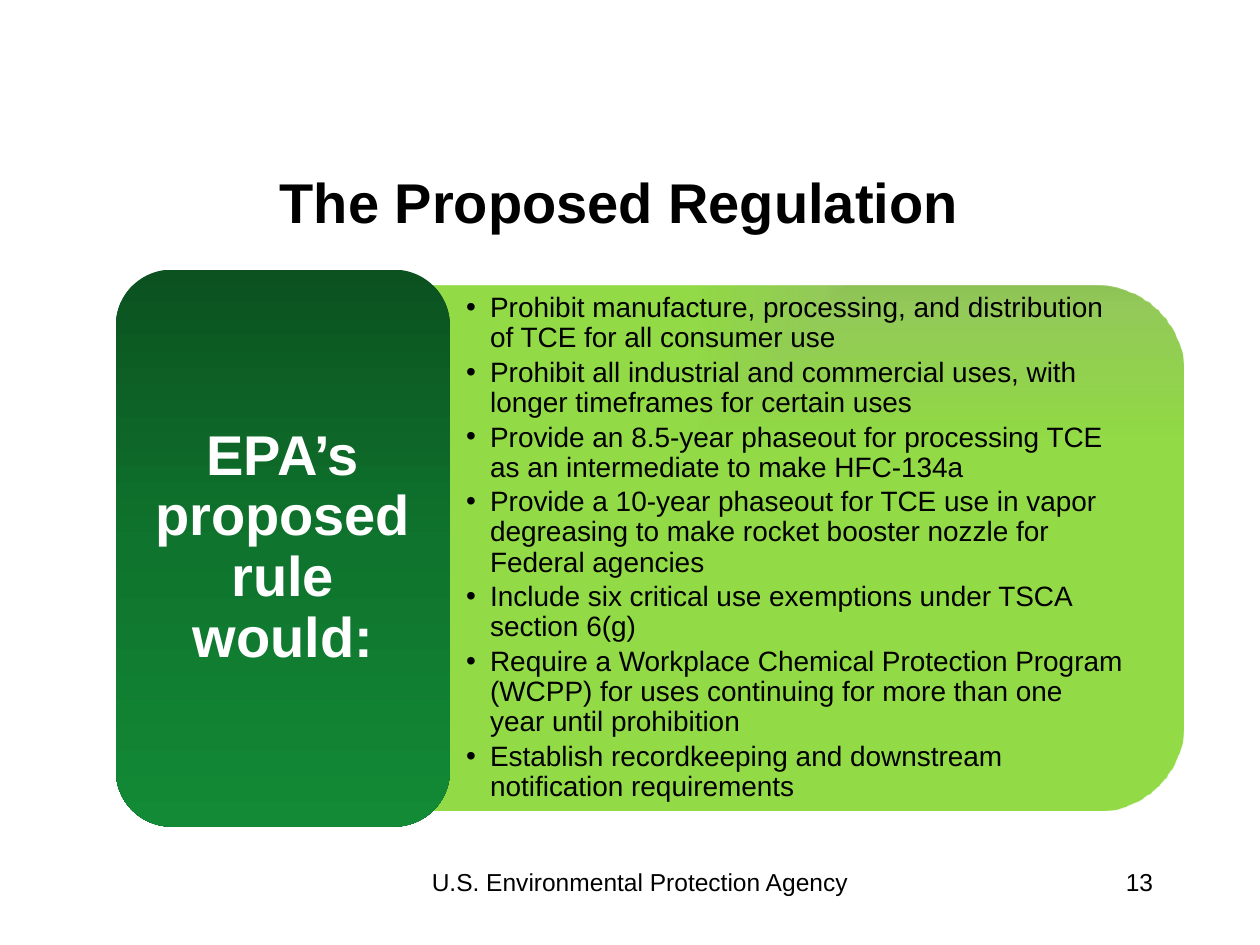
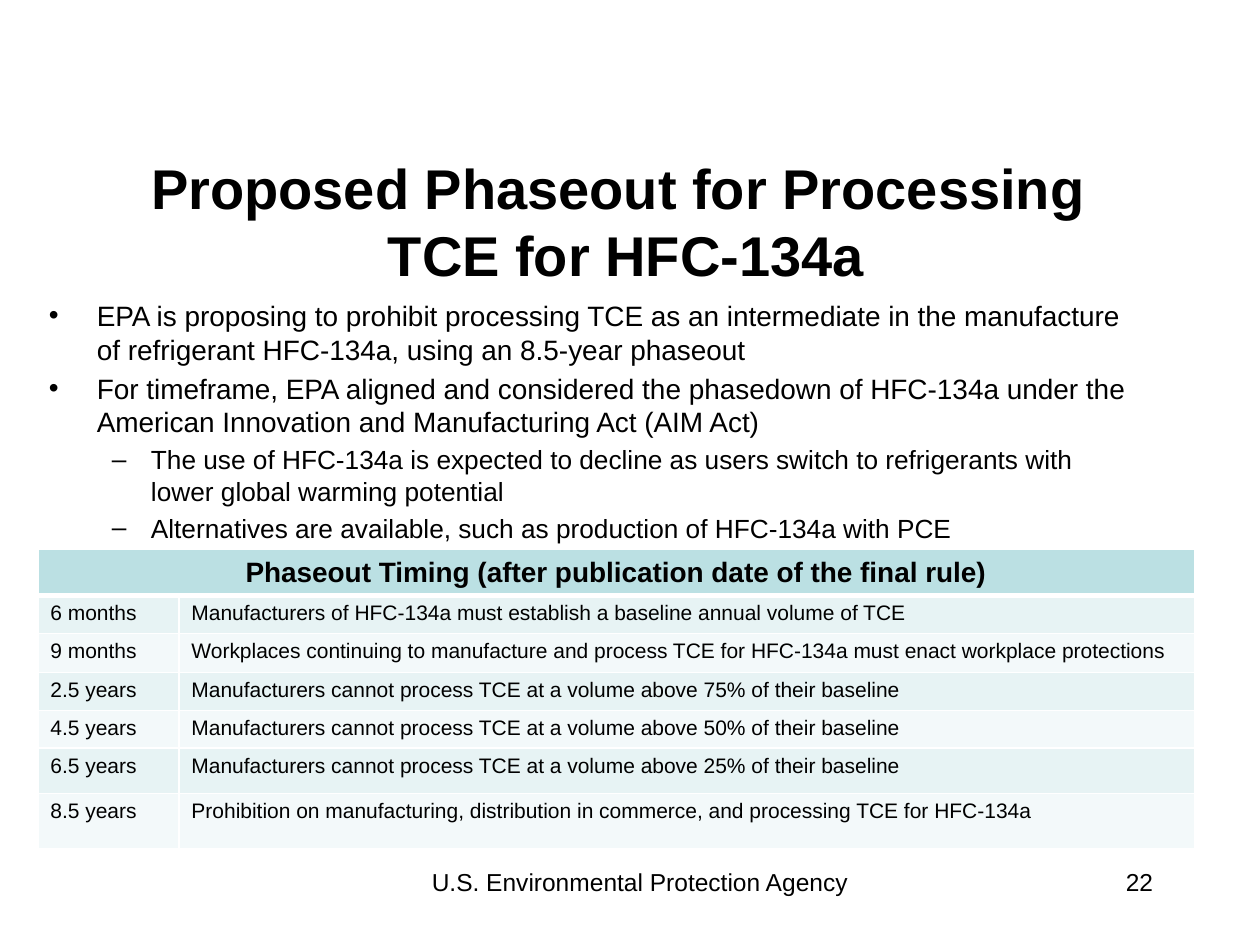
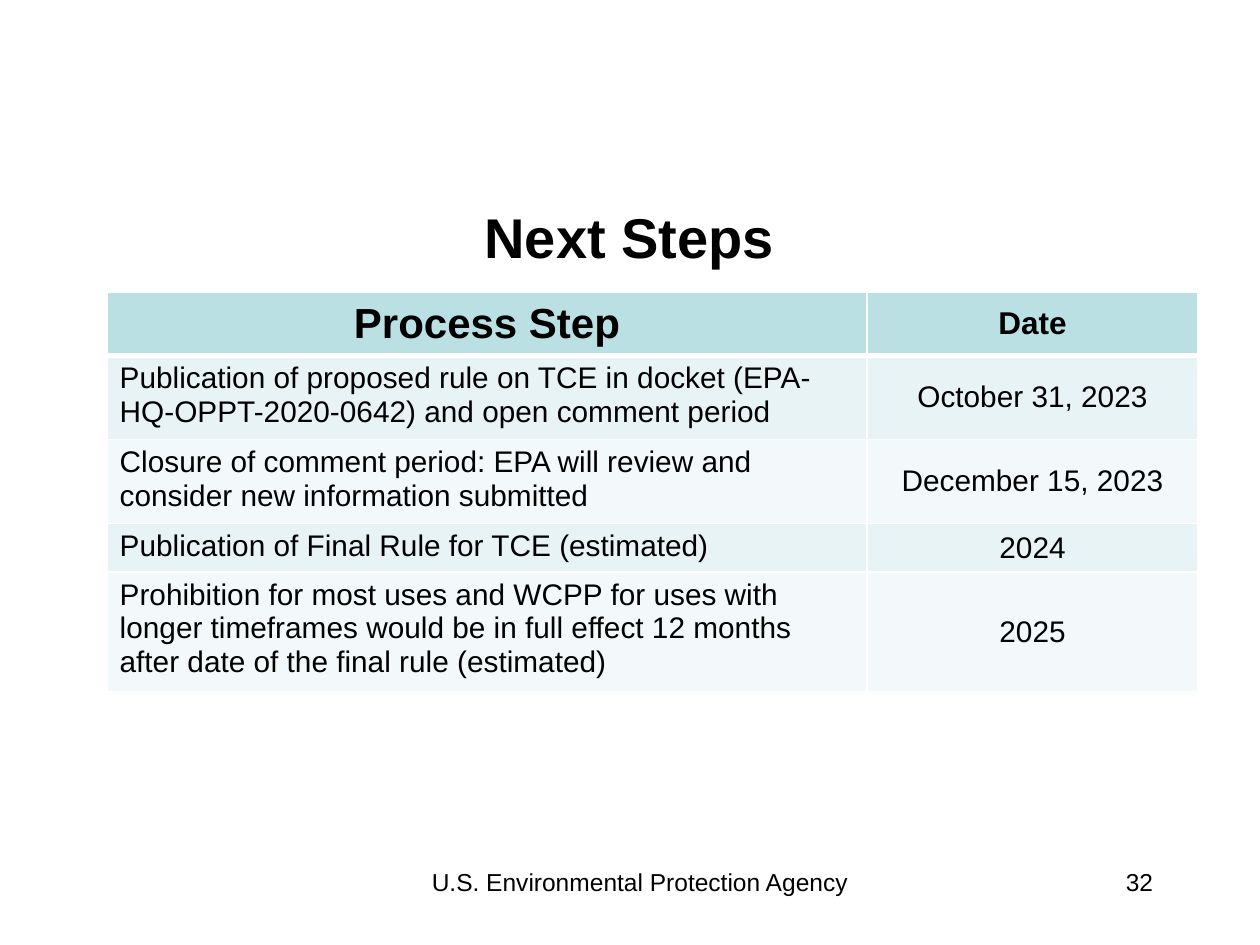
"""Build three slides on the proposed TCE regulation."""
from lxml.etree import SubElement
from pptx import Presentation
from pptx.dml.color import RGBColor
from pptx.enum.shapes import MSO_SHAPE
from pptx.enum.text import MSO_ANCHOR, MSO_AUTO_SIZE, PP_ALIGN
from pptx.oxml.ns import qn
from pptx.util import Inches, Pt

FONT = "Arial"
BLACK, WHITE = "000000", "FFFFFF"
HEADER_FILL = "BBE0E3"
BAND_FILLS = ("E7F3F4", "F3F9FA")
AGENCY = "U.S. Environmental Protection Agency"
LEFT, CENTER, RIGHT = PP_ALIGN.LEFT, PP_ALIGN.CENTER, PP_ALIGN.RIGHT

RULE_POINTS = (
    "Prohibit manufacture, processing, and distribution of TCE for all consumer use",
    "Prohibit all industrial and commercial uses, with longer timeframes for certain uses",
    "Provide an 8.5-year phaseout for processing TCE as an intermediate to make HFC-134a",
    "Provide a 10-year phaseout for TCE use in vapor degreasing to make rocket booster "
    "nozzle for Federal agencies",
    "Include six critical use exemptions under TSCA section 6(g)",
    "Require a Workplace Chemical Protection Program (WCPP) for uses continuing for more "
    "than one year until prohibition",
    "Establish recordkeeping and downstream notification requirements",
)
PHASEOUT_POINTS = (
    "EPA is proposing to prohibit processing TCE as an intermediate in the manufacture of "
    "refrigerant HFC-134a, using an 8.5-year phaseout",
    "For timeframe, EPA aligned and considered the phasedown of HFC-134a under the American "
    "Innovation and Manufacturing Act (AIM Act)",
)
PHASEOUT_DETAILS = (
    "The use of HFC-134a is expected to decline as users switch to refrigerants with lower "
    "global warming potential",
    "Alternatives are available, such as production of HFC-134a with PCE",
)
VOLUME_LIMIT = "Manufacturers cannot process TCE at a volume above {} of their baseline"
PHASEOUT_TIMING = (
    ("6 months", "Manufacturers of HFC-134a must establish a baseline annual volume of TCE"),
    ("9 months", "Workplaces continuing to manufacture and process TCE for HFC-134a must enact "
                 "workplace protections"),
    ("2.5 years", VOLUME_LIMIT.format("75%")),
    ("4.5 years", VOLUME_LIMIT.format("50%")),
    ("6.5 years", VOLUME_LIMIT.format("25%")),
    ("8.5 years", "Prohibition on manufacturing, distribution in commerce, and processing TCE "
                  "for HFC-134a"),
)
NEXT_STEPS = (
    ("Publication of proposed rule on TCE in docket (EPA-HQ-OPPT-2020-0642) and open comment "
     "period", "October 31, 2023"),
    ("Closure of comment period: EPA will review and consider new information submitted",
     "December 15, 2023"),
    ("Publication of Final Rule for TCE (estimated)", "2024"),
    ("Prohibition for most uses and WCPP for uses with longer timeframes would be in full "
     "effect 12 months after date of the final rule (estimated)", "2025"),
)


def color(value):
    """Turn a hex string into a colour."""
    return RGBColor.from_string(value)


def inches(values):
    """Turn numbers into lengths."""
    return [Inches(value) for value in values]


class Deck:
    """Hold the shared style and the current slide."""

    def __init__(self):
        """Start a 10 by 7.5 inch presentation."""
        self.deck = Presentation()
        self.deck.slide_width, self.deck.slide_height = inches((10, 7.5))
        self.page = None

    def add_page(self, title, place, number):
        """Add a slide with its title, footer and page number."""
        self.page = self.deck.slides.add_slide(self.deck.slide_layouts[5])
        heading = self.page.shapes.title
        heading.left, heading.top, heading.width, heading.height = inches(place)
        frame = heading.text_frame
        frame.auto_size = MSO_AUTO_SIZE.NONE
        frame.vertical_anchor = MSO_ANCHOR.MIDDLE
        self.put_text(frame.paragraphs[0], title, 32, CENTER, bold=True)
        for text, spot, align in ((AGENCY, (2.08, 6.83, 6, 0.5), CENTER),
                                  (str(number), (7.17, 6.83, 2.08, 0.5), RIGHT)):
            self.put_text(self.text_frame(spot).paragraphs[0], text, 14, align)

    def put_text(self, para, text, size, align=LEFT, bold=False, fill=BLACK):
        """Fill and style one paragraph."""
        para.text = text
        para.alignment = align
        para.font.name = FONT
        para.font.size = Pt(size)
        para.font.bold = bold
        para.font.color.rgb = color(fill)

    def text_frame(self, place):
        """Add a wrapping text box and return its frame."""
        frame = self.page.shapes.add_textbox(*inches(place)).text_frame
        frame.word_wrap = True
        return frame

    def inset(self, frame, side, end):
        """Set the margins of a frame and centre it vertically."""
        frame.margin_left = frame.margin_right = Inches(side)
        frame.margin_top = frame.margin_bottom = Inches(end)
        frame.vertical_anchor = MSO_ANCHOR.MIDDLE

    def bullets(self, frame, lines, size, mark, margin, hang, gap, spacing=1.0):
        """Add hanging bullet paragraphs after any that are there."""
        for line in lines:
            first = not frame.text
            para = frame.paragraphs[0] if first else frame.add_paragraph()
            para.line_spacing = spacing
            para.space_before = Pt(0 if first else gap)
            properties = para._p.get_or_add_pPr()
            properties.set("marL", str(Inches(margin)))
            properties.set("indent", str(-Inches(hang)))
            SubElement(properties, qn("a:buFont"), typeface=FONT)
            SubElement(properties, qn("a:buChar"), char=mark)
            self.put_text(para, line, size)

    def panel(self, kind, place, stops):
        """Add a shape without outline and return it with its gradient element."""
        shape = self.page.shapes.add_shape(kind, *inches(place))
        shape.shadow.inherit = False
        shape.line.fill.background()
        shape.fill.gradient()
        gradient = shape._element.spPr.find(qn("a:gradFill"))
        for child in list(gradient):
            gradient.remove(child)
        stop_list = SubElement(gradient, qn("a:gsLst"))
        for position, value, opacity in stops:
            stop = SubElement(stop_list, qn("a:gs"), pos=str(position * 1000))
            tone = SubElement(stop, qn("a:srgbClr"), val=value)
            if opacity < 100:
                SubElement(tone, qn("a:alpha"), val=str(opacity * 1000))
        return shape, gradient

    def borders(self, cell, bottom):
        """Draw white cell borders with a given bottom width."""
        properties = cell._tc.get_or_add_tcPr()
        for index, (side, width) in enumerate(zip("LRTB", (1, 1, 1, bottom))):
            line = SubElement(properties, qn(f"a:ln{side}"), w=str(Pt(width)))
            SubElement(SubElement(line, qn("a:solidFill")), qn("a:srgbClr"), val=WHITE)
            properties.insert(index, line)

    def table(self, place, columns, heights, headings, rows, size, aligns):
        """Add a banded table with a header of (text, size) pairs."""
        shape = self.page.shapes.add_table(len(heights), len(columns), *inches(place))
        grid = shape.table
        grid.first_row = grid.horz_banding = False
        for column, width in zip(grid.columns, columns):
            column.width = Inches(width)
        for row, height in zip(grid.rows, heights):
            row.height = Inches(height)
        for number, row in enumerate(grid.rows):
            for cell in row.cells:
                cell.fill.solid()
                fill = BAND_FILLS[(number - 1) % 2] if number else HEADER_FILL
                cell.fill.fore_color.rgb = color(fill)
                self.borders(cell, 1 if number else 3)
        if len(headings) < len(columns):
            grid.cell(0, 0).merge(grid.cell(0, len(columns) - 1))
        for index, (text, heading_size) in enumerate(headings):
            cell = grid.cell(0, index)
            cell.vertical_anchor = MSO_ANCHOR.MIDDLE
            self.put_text(cell.text_frame.paragraphs[0], text, heading_size, CENTER, bold=True)
        for number, texts in enumerate(rows, 1):
            for index, (text, align) in enumerate(zip(texts, aligns)):
                cell = grid.cell(number, index)
                if align == CENTER:
                    cell.vertical_anchor = MSO_ANCHOR.MIDDLE
                self.put_text(cell.text_frame.paragraphs[0], text, size, align)


def add_regulation(deck):
    """Show what the proposed rule would do."""
    deck.add_page("The Proposed Regulation", (0.75, 1.06, 8.33, 1.08), 13)
    backdrop, gradient = deck.panel(
        MSO_SHAPE.ROUND_2_SAME_RECTANGLE, (4.33, 1.37, 4.17, 5.96),
        ((0, "57812A", 100), (50, "82C13F", 85), (100, "92DA46", 100)))
    backdrop.rotation = 90
    corner = SubElement(gradient, qn("a:path"), {"path": "rect"})
    SubElement(corner, qn("a:fillToRect"), l="100000", b="100000")
    points = deck.text_frame((3.43, 2.47, 5.76, 3.76))
    deck.inset(points, 0.27, 0.14)
    deck.bullets(points, RULE_POINTS, 16, "•", 0.19, 0.19, 2.5, 0.9)

    label, gradient = deck.panel(
        MSO_SHAPE.ROUNDED_RECTANGLE, (0.92, 2.14, 2.65, 4.42),
        ((0, "0B5220", 100), (50, "0F742D", 100), (100, "128A36", 100)))
    SubElement(gradient, qn("a:lin"), ang="5400000", scaled="0")
    frame = label.text_frame
    frame.word_wrap = True
    deck.inset(frame, 0.13, 0.07)
    para = frame.paragraphs[0]
    para.line_spacing = 0.9
    deck.put_text(para, "EPA’s proposed rule would:", 32, CENTER, bold=True, fill=WHITE)


def add_phaseout(deck):
    """Show the phaseout and its timing."""
    deck.add_page("Proposed Phaseout for Processing \vTCE for HFC-134a",
                  (0.24, 1.21, 9.46, 1.08), 22)
    points = deck.text_frame((0.29, 2.32, 8.87, 1.97))
    deck.bullets(points, PHASEOUT_POINTS, 16, "•", 0.38, 0.38, 3.2)
    deck.bullets(points, PHASEOUT_DETAILS, 15, "–", 0.81, 0.31, 3)
    deck.table((0.3, 4.36, 9.17, 2.38), (1.12, 8.06),
               (0.35, 0.3, 0.31, 0.28, 0.28, 0.36, 0.44),
               [("Phaseout Timing (after publication date of the final rule)", 16)],
               PHASEOUT_TIMING, 12, (LEFT, LEFT))


def add_next_steps(deck):
    """Show the remaining steps and their dates."""
    deck.add_page("Next Steps", (0.83, 1.33, 8.33, 1.08), 32)
    deck.table((0.85, 2.32, 8.66, 3.15), (6.03, 2.63), (0.48, 0.45, 0.35, 0.26, 0.55),
               [("Process Step", 24), ("Date", 18)], NEXT_STEPS, 17, (LEFT, CENTER))


def main():
    """Build and save the presentation."""
    deck = Deck()
    add_regulation(deck)
    add_phaseout(deck)
    add_next_steps(deck)
    deck.deck.save("out.pptx")


if __name__ == "__main__":
    main()
